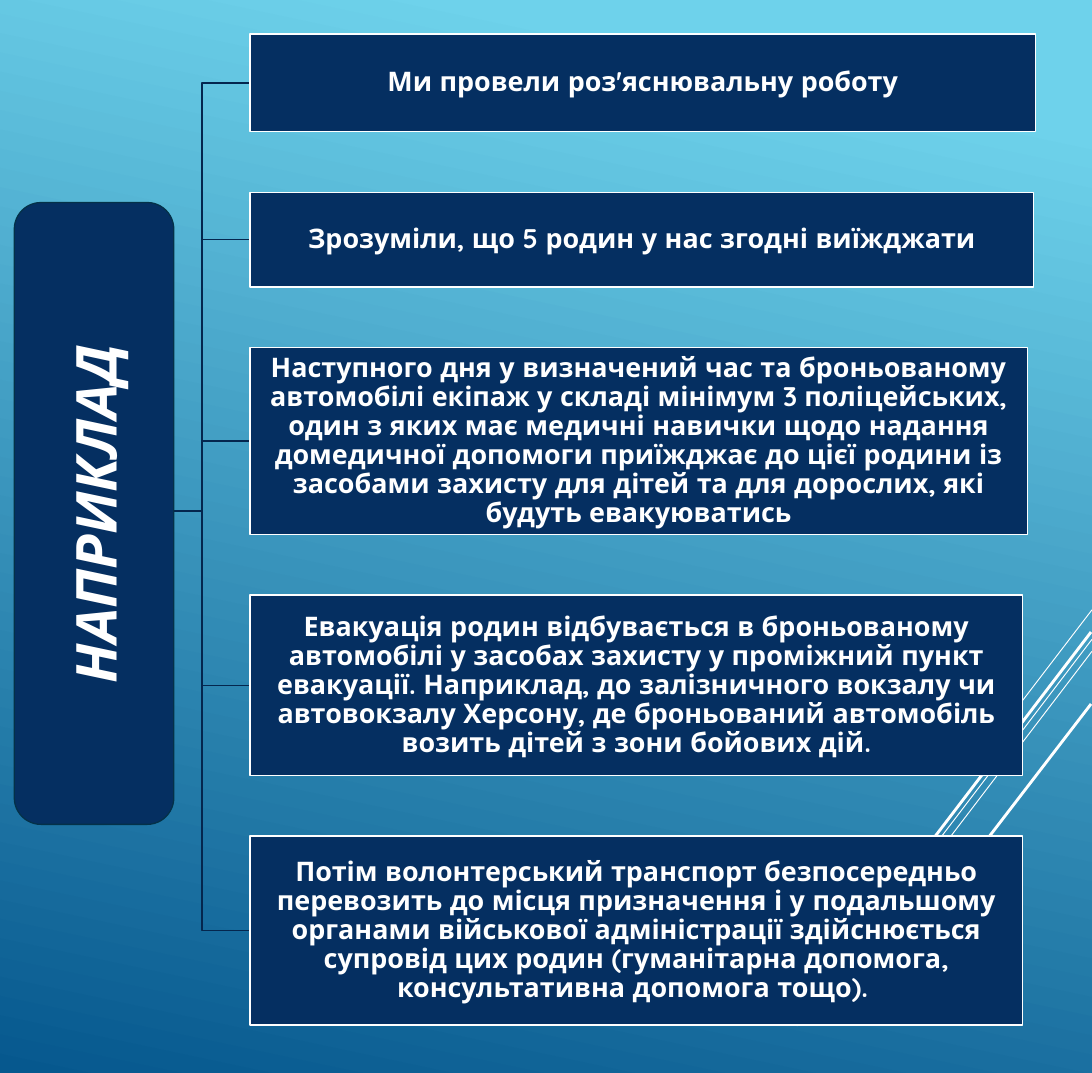
from pptx import Presentation
from pptx.dml.color import RGBColor
from pptx.enum.shapes import MSO_CONNECTOR as CONN, MSO_SHAPE as SHAPE
from pptx.enum.text import MSO_ANCHOR as ANCHOR, PP_ALIGN as ALIGN
from pptx.oxml.ns import qn
from pptx.util import Inches, Pt
from lxml import etree

TITLE = "НАПРИКЛАД"
STEPS = [
    (0.37, 8.52, 1.06, "Ми провели роз'яснювальну роботу"),
    (2.09, 8.5, 1.02, "Зрозуміли, що 5 родин у нас згодні виїжджати"),
    (3.77, 8.43, 2.02, "Наступного дня у визначений час та броньованому "
     "автомобілі екіпаж у складі мінімум 3 поліцейських, один з яких має "
     "медичні навички щодо надання домедичної допомоги приїжджає до цієї "
     "родини із засобами захисту для дітей та для дорослих, які будуть "
     "евакуюватись"),
    (6.45, 8.38, 1.96, "Евакуація родин відбувається в броньованому автомобілі "
     "у засобах захисту у проміжний пункт евакуації. Наприклад, до "
     "залізничного вокзалу чи автовокзалу Херсону, де броньований автомобіль "
     "возить дітей з зони бойових дій."),
    (9.06, 8.38, 2.05, "Потім волонтерський транспорт безпосередньо перевозить "
     "до місця призначення і у подальшому органами військової адміністрації "
     "здійснюється супровід цих родин (гуманітарна допомога, консультативна "
     "допомога тощо). "),
]
RAYS = [
    (11.84, 6.61, 10.86, 7.89, 0.75),
    (11.84, 6.93, 8.64, 11.12, 0.75),
    (11.84, 7.06, 9.8, 9.73, 0.75),
    (11.83, 6.85, 9.96, 9.3, 2.25),
    (11.83, 7.63, 10.47, 9.4, 2.25),
]
COLORS = {"sky": "6ED2EB", "sea": "06588E", "navy": "052F61", "white": "FFFFFF",
          "branch": "04264E", "title_edge": "043148"}
FONT = {"name": "Quicksand", "bold": True}
STEP_FONT = {**FONT, "size": Pt(21)}
TITLE_FONT = {**FONT, "size": Pt(44), "italic": True}
MARGINS = ("margin_left", "margin_top", "margin_right", "margin_bottom")

SLIDE_WIDTH, SLIDE_HEIGHT = 11.84, 11.63
STEP_LEFT, TRUNK_X, ROOT_X, ROOT_Y = 2.71, 2.19, 1.54, 5.54
TITLE_BOX = (-2.35, 4.7, 6.74, 1.73)


def color(name):
    return RGBColor.from_string(COLORS[name])


def set_line(s, name, width):
    s.line.color.rgb = color(name)
    s.line.width = Pt(width)


def add_box(shapes, kind, box, edge, text, font):
    s = shapes.add_shape(kind, *map(Inches, box))
    s.shadow.inherit = False
    s.fill.solid()
    s.fill.fore_color.rgb = color("navy")
    set_line(s, edge, 1)
    tf = s.text_frame
    tf.word_wrap = True
    tf.vertical_anchor = ANCHOR.MIDDLE
    p = tf.paragraphs[0]
    p.alignment = ALIGN.CENTER
    r = p.add_run()
    r.text = text
    for key, value in font.items():
        setattr(r.font, key, value)
    r.font.color.rgb = color("white")
    return s


def add_ray(shapes, x1, y1, x2, y2, width):
    s = shapes.add_connector(CONN.STRAIGHT, *map(Inches, (x1, y1, x2, y2)))
    set_line(s, "white", width)
    etree.SubElement(s._element.spPr, qn("a:effectLst"))


def add_branch(shapes, y):
    points = [(ROOT_X, ROOT_Y), (TRUNK_X, ROOT_Y), (TRUNK_X, y), (STEP_LEFT, y)]
    start, *rest = [(Inches(px), Inches(py)) for px, py in points]
    builder = shapes.build_freeform(*start)
    builder.add_line_segments(rest, close=False)
    s = builder.convert_to_shape()
    s.shadow.inherit = False
    s.fill.background()
    set_line(s, "branch", 1)


def add_step(shapes, top, width, height, text):
    box = (STEP_LEFT, top, width, height)
    s = add_box(shapes, SHAPE.RECTANGLE, box, "white", text, STEP_FONT)
    for side in MARGINS:
        setattr(s.text_frame, side, Inches(0.01))
    s.text_frame.paragraphs[0].line_spacing = 0.9


def main():
    prs = Presentation()
    prs.slide_width, prs.slide_height = Inches(SLIDE_WIDTH), Inches(SLIDE_HEIGHT)
    slide = prs.slides.add_slide(prs.slide_layouts[6])
    shapes = slide.shapes

    fill = slide.background.fill
    fill.gradient()
    fill.gradient_angle = 360 - 102
    for stop, name, position in zip(fill.gradient_stops, ("sky", "sea"), (0.1, 1)):
        stop.color.rgb = color(name)
        stop.position = position

    for ray in RAYS:
        add_ray(shapes, *ray)
    for top, _, height, _ in reversed(STEPS):
        add_branch(shapes, top + height / 2)
    for step in STEPS:
        add_step(shapes, *step)

    title = add_box(shapes, SHAPE.ROUNDED_RECTANGLE, TITLE_BOX, "title_edge",
                    TITLE, TITLE_FONT)
    title.rotation = 270
    prs.save("out.pptx")


if __name__ == "__main__":
    main()
